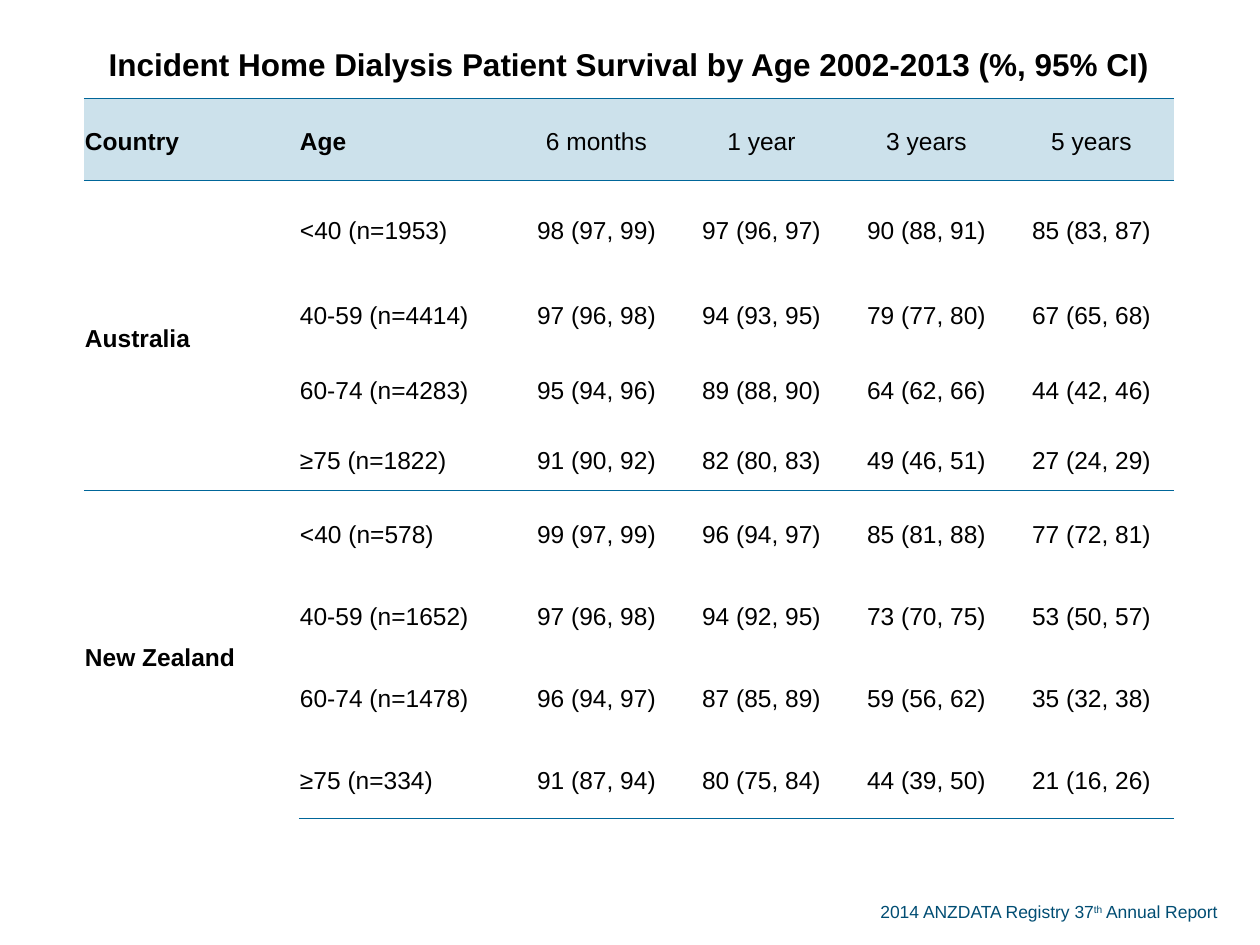
"""Builds the slide with the table of home dialysis survival by age."""
from lxml import etree
from pptx import Presentation
from pptx.dml.color import RGBColor
from pptx.enum.text import MSO_ANCHOR, PP_ALIGN
from pptx.oxml.ns import qn
from pptx.util import Pt

LEFT, MID = PP_ALIGN.LEFT, PP_ALIGN.CENTER
CENTER = MSO_ANCHOR.MIDDLE
SCALE = 914400 / 126
HUES = {"ink": "000000", "rule": "006699", "head": "CCE1EB", "foot": "004D73"}
TITLE = "Incident Home Dialysis Patient Survival by Age 2002-2013 (%, 95% CI)"
HEADS = ["Country", "Age", "6 months", "1 year", "3 years", "5 years"]
GROUPS = {
    "Australia": [
        ["<40 (n=1953)", "98 (97, 99)", "97 (96, 97)", "90 (88, 91)", "85 (83, 87)"],
        ["40-59 (n=4414)", "97 (96, 98)", "94 (93, 95)", "79 (77, 80)", "67 (65, 68)"],
        ["60-74 (n=4283)", "95 (94, 96)", "89 (88, 90)", "64 (62, 66)", "44 (42, 46)"],
        ["≥75 (n=1822)", "91 (90, 92)", "82 (80, 83)", "49 (46, 51)", "27 (24, 29)"],
    ],
    "New Zealand": [
        ["<40 (n=578)", "99 (97, 99)", "96 (94, 97)", "85 (81, 88)", "77 (72, 81)"],
        ["40-59 (n=1652)", "97 (96, 98)", "94 (92, 95)", "73 (70, 75)", "53 (50, 57)"],
        ["60-74 (n=1478)", "96 (94, 97)", "87 (85, 89)", "59 (56, 62)", "35 (32, 38)"],
        ["≥75 (n=334)", "91 (87, 94)", "80 (75, 84)", "44 (39, 50)", "21 (16, 26)"],
    ],
}
COLS = [215, 215] + [165] * 4
ROWS = [72, 82, 96, 74, 75, 66] + [82] * 4
RULED = {0, 1, 5, 9}


def px(size):
    """Turns px into EMU."""
    return round(size * SCALE)


def write(para, text, size=14, bold=False, hue="ink", align=LEFT, base=0):
    """Adds a run of text to a paragraph."""
    para.alignment = align
    run = para.add_run()
    run.text = text
    font = run.font
    font.name, font.size, font.bold = "Arial", Pt(size), bold
    font.color.rgb = RGBColor.from_string(HUES[hue])
    if base:
        run._r.get_or_add_rPr().set("baseline", str(base * 1000))


class Deck:
    """Holds the deck and its current slide."""

    def __init__(self):
        """Starts a deck with one blank slide."""
        self.prs = Presentation()
        self.prs.slide_width, self.prs.slide_height = px(1260), px(945)
        self.slide = self.prs.slides.add_slide(self.prs.slide_layouts[6])

    def grid(self, x, y, cols, rows):
        """Adds a plain table with the given column and row sizes."""
        box = map(px, (x, y, sum(cols), sum(rows)))
        table = self.slide.shapes.add_table(len(rows), len(cols), *box).table
        table.first_row = table.horz_banding = False
        for col, width in zip(table.columns, cols):
            col.width = px(width)
        for row, height in zip(table.rows, rows):
            row.height = px(height)
        return table

    def edge(self, cell, ruled):
        """Draws the named sides of a cell and clears the rest."""
        props = cell._tc.get_or_add_tcPr()
        for side in "LRTB":
            line = etree.SubElement(props, qn(f"a:ln{side}"), w=str(Pt(0.5)))
            if side in ruled:
                fill = etree.SubElement(line, qn("a:solidFill"))
                etree.SubElement(fill, qn("a:srgbClr"), val=HUES["rule"])
            else:
                etree.SubElement(line, qn("a:noFill"))

    def style(self, cell, ruled, fill=None):
        """Sets the edges, fill and margins of a cell."""
        self.edge(cell, ruled)
        if fill:
            cell.fill.solid()
            cell.fill.fore_color.rgb = RGBColor.from_string(HUES[fill])
        else:
            cell.fill.background()
        cell.vertical_anchor = CENTER
        cell.margin_left = cell.margin_right = cell.margin_top = px(1)
        cell.margin_bottom = 0

    def fill(self, cell, text, **form):
        """Writes the text of a cell."""
        para = cell.text_frame.paragraphs[0]
        para.line_spacing, para.space_after = 1.19, Pt(14)
        write(para, text, **form)

    def note(self, x, y, w, h, parts):
        """Adds a one-line text box from text and baseline pairs."""
        box = self.slide.shapes.add_textbox(*map(px, (x, y, w, h)))
        for text, base in parts:
            write(box.text_frame.paragraphs[0], text, 10, hue="foot", base=base)


def main():
    """Builds and saves the slide."""
    deck = Deck()
    table = deck.grid(84, 26, COLS, ROWS)
    for r in range(len(ROWS)):
        ruled = "T" * (r - 1 in RULED) + "B" * (r in RULED)
        for c in range(len(COLS)):
            deck.style(table.cell(r, c), ruled, "head" if r == 1 else None)

    table.cell(0, 0).merge(table.cell(0, 5))
    deck.fill(table.cell(0, 0), TITLE, size=18, bold=True, align=MID)
    for c, head in enumerate(HEADS):
        deck.fill(table.cell(1, c), head, bold=c < 2, align=LEFT if c < 2 else MID)

    top = 2
    for land, lines in GROUPS.items():
        table.cell(top, 0).merge(table.cell(top + len(lines) - 1, 0))
        deck.fill(table.cell(top, 0), land, bold=True)
        for r, line in enumerate(lines, top):
            for c, text in enumerate(line, 1):
                deck.fill(table.cell(r, c), text, align=LEFT if c < 2 else MID)
        top += len(lines)

    parts = [("2014 ANZDATA Registry 37", 0), ("th", 30), (" Annual Report", 0)]
    deck.note(868, 895, 377, 34, parts)
    deck.prs.save("out.pptx")


if __name__ == "__main__":
    main()
